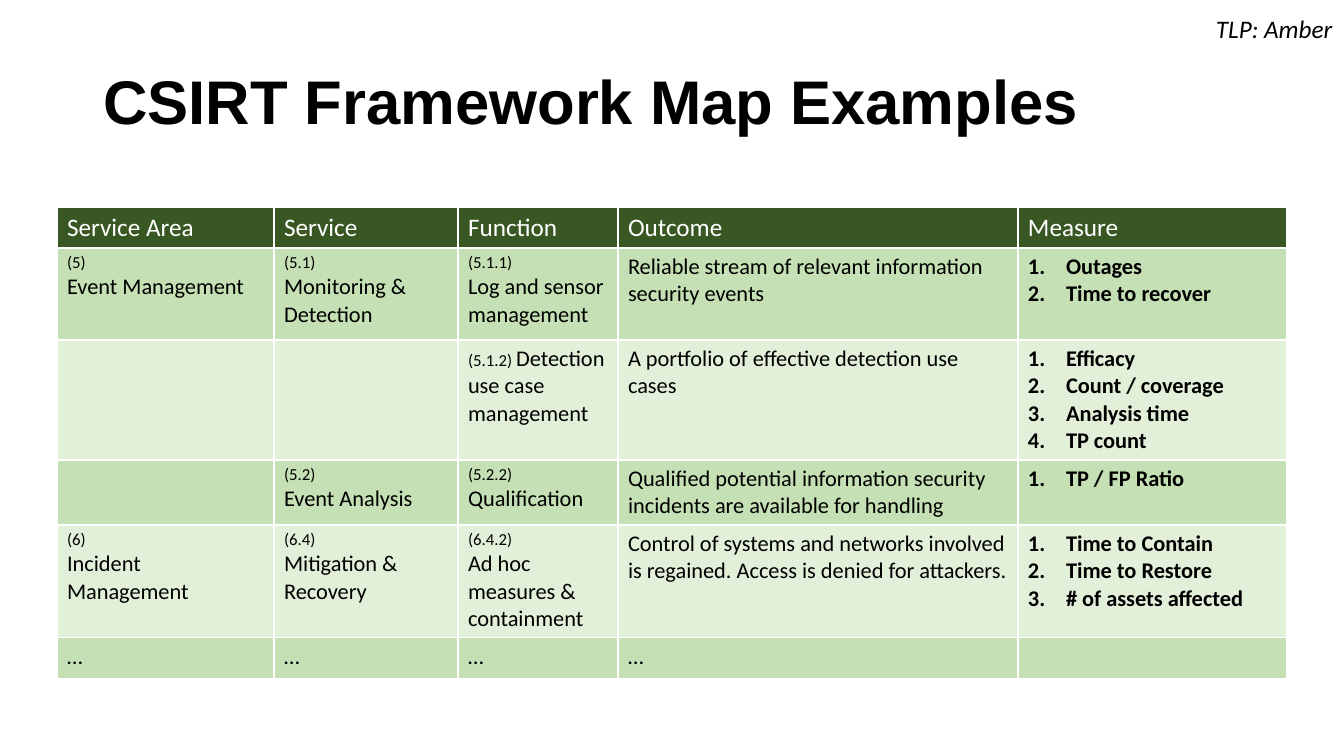
from lxml import etree
from pptx import Presentation
from pptx.dml.color import RGBColor
from pptx.enum.text import MSO_ANCHOR, MSO_AUTO_SIZE, PP_ALIGN
from pptx.oxml.ns import qn
from pptx.util import Pt

PX = 914400 / 100.8
LEFT, MIDDLE = PP_ALIGN.LEFT, MSO_ANCHOR.MIDDLE
NO_FIT, GROW = MSO_AUTO_SIZE.NONE, MSO_AUTO_SIZE.SHAPE_TO_FIT_TEXT
HEADER_FILL, BAND_FILLS = "385723", ("C5E0B4", "E2F0D9")
CODE_SIZE, BODY_SIZE, HEADER_SIZE = 12, 16, 18
NUMBER_INDENT = 38

COLUMNS = {"Service Area": 217, "Service": 184, "Function": 160,
           "Outcome": 400, "Measure": 269}
ROW_HEIGHTS = [41, 92, 120, 65, 112, 40]
# Each cell is a list of paragraphs; a leading "(code)" is set smaller.
ROWS = [
    [["(5)\nEvent Management"], ["(5.1)\nMonitoring & Detection"],
     ["(5.1.1)\nLog and sensor management"],
     ["Reliable stream of relevant information security events"],
     ["Outages", "Time to recover"]],
    [[], [], ["(5.1.2) Detection use case management"],
     ["A portfolio of effective detection use cases"],
     ["Efficacy", "Count / coverage", "Analysis time", "TP count"]],
    [[], ["(5.2)\nEvent Analysis"], ["(5.2.2) Qualification"],
     ["Qualified potential information security incidents are available for handling"],
     ["TP / FP Ratio"]],
    [["(6)\nIncident Management"], ["(6.4)\nMitigation & Recovery"],
     ["(6.4.2)\nAd hoc measures & containment"],
     ["Control of systems and networks involved is regained. "
      "Access is denied for attackers."],
     ["Time to Contain", "Time to Restore", "# of assets affected"]],
    [["…"], ["…"], ["…"], ["…"], []],
]


def px(length):
    return round(length * PX)


def add_text(para, text, size=BODY_SIZE, color="000000", font="Calibri",
             bold=False, italic=False):
    """Append a run; a trailing newline becomes a line break of the same size."""
    span = para.add_run()
    span.text = text.rstrip("\n")
    span.font.size = Pt(size)
    span.font.name = font
    span.font.bold = bold
    span.font.italic = italic
    span.font.color.rgb = RGBColor.from_string(color)
    if text.endswith("\n"):
        para.add_line_break()
        etree.SubElement(para._p[-1], qn("a:rPr"), sz=str(size * 100))


deck = Presentation()
deck.slide_width, deck.slide_height = px(1344), px(756)
page = deck.slides.add_slide(deck.slide_layouts[5])

title = page.shapes.title
title.left, title.top, title.width, title.height = px(93), px(23), px(1159), px(163)
title.text_frame.word_wrap = True
title.text_frame.auto_size = NO_FIT
title.text_frame.vertical_anchor = MIDDLE
heading = title.text_frame.paragraphs[0]
heading.alignment = LEFT
heading.line_spacing = 0.9
add_text(heading, "CSIRT Framework Map Examples", size=44, font="Arial", bold=True)

table = page.shapes.add_table(
    len(ROW_HEIGHTS), len(COLUMNS), px(57), px(207),
    px(sum(COLUMNS.values())), px(sum(ROW_HEIGHTS))).table
for row, height in zip(table.rows, ROW_HEIGHTS):
    row.height = px(height)

for index, (name, width) in enumerate(COLUMNS.items()):
    table.columns[index].width = px(width)
    cell = table.cell(0, index)
    cell.fill.solid()
    cell.fill.fore_color.rgb = RGBColor.from_string(HEADER_FILL)
    add_text(cell.text_frame.paragraphs[0], name, size=HEADER_SIZE, color="FFFFFF")

for row_index, row in enumerate(ROWS):
    for column, (name, lines) in enumerate(zip(COLUMNS, row)):
        cell = table.cell(row_index + 1, column)
        cell.fill.solid()
        cell.fill.fore_color.rgb = RGBColor.from_string(BAND_FILLS[row_index % 2])
        frame = cell.text_frame
        for line_index, line in enumerate(lines):
            para = frame.add_paragraph() if line_index else frame.paragraphs[0]
            numbered = name == "Measure"
            if numbered:
                layout = para._p.get_or_add_pPr()
                layout.set("marL", str(px(NUMBER_INDENT)))
                layout.set("indent", str(-px(NUMBER_INDENT)))
                etree.SubElement(layout, qn("a:buFont"), typeface="+mj-lt")
                etree.SubElement(layout, qn("a:buAutoNum"), type="arabicPeriod")
            if line.startswith("("):
                code_end = line.index(")") + 2
                add_text(para, line[:code_end], size=CODE_SIZE)
                line = line[code_end:]
            add_text(para, line, bold=numbered)

label = page.shapes.add_textbox(px(1206), px(8), px(141), px(40))
label.text_frame.word_wrap = False
label.text_frame.auto_size = GROW
add_text(label.text_frame.paragraphs[0], "TLP: Amber", size=18, italic=True)

deck.save("out.pptx")
